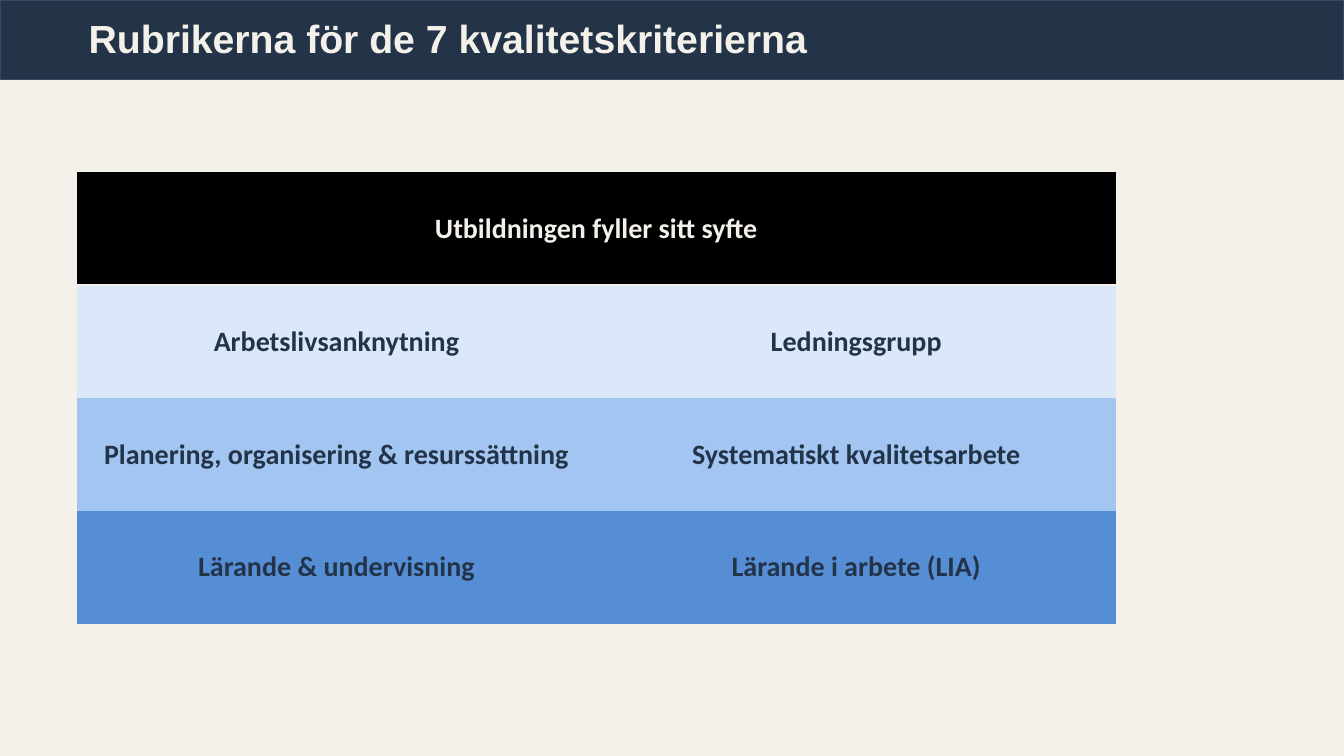
from lxml import etree
from pptx import Presentation
from pptx import util as u
from pptx.dml.color import RGBColor
from pptx.enum import shapes, text
from pptx.oxml.ns import qn

CREAM = RGBColor(0xF4, 0xF1, 0xEB)
NAVY = RGBColor(0x23, 0x33, 0x48)
BAND_EDGE = RGBColor(0x38, 0x49, 0x68)
BLACK = RGBColor(0x00, 0x00, 0x00)
PALE_BLUE = RGBColor(0xDA, 0xE8, 0xFA)
LIGHT_BLUE = RGBColor(0xA3, 0xC5, 0xF2)
MID_BLUE = RGBColor(0x55, 0x8E, 0xD5)
NO_STYLE = "{2D5ABB26-0587-4C30-8999-92F81FD0307C}"

BAND_HEIGHT = u.Inches(0.79)
COLUMN_WIDTH = u.Inches(5.155)
ROW_HEIGHT = u.Inches(1.12)

CRITERIA = [
    (BLACK, CREAM, ["Utbildningen fyller sitt syfte", ""]),
    (PALE_BLUE, NAVY, ["Arbetslivsanknytning", "Ledningsgrupp"]),
    (LIGHT_BLUE, NAVY, ["Planering, organisering & resurssättning",
                        "Systematiskt kvalitetsarbete"]),
    (MID_BLUE, NAVY, ["Lärande & undervisning", "Lärande i arbete (LIA)"]),
]


def add_bold_run(paragraph, words, font, size, color):
    run = paragraph.add_run()
    run.text = words
    run.font.name = font
    run.font.size = u.Pt(size)
    run.font.bold = True
    run.font.color.rgb = color


prs = Presentation()
prs.slide_width = u.Inches(13.33)
prs.slide_height = u.Inches(7.5)
slide = prs.slides.add_slide(prs.slide_layouts[5])
slide.background.fill.solid()
slide.background.fill.fore_color.rgb = CREAM

# Header band, placed behind the title
band = slide.shapes.add_shape(shapes.MSO_SHAPE.RECTANGLE, 0, 0,
                              prs.slide_width, BAND_HEIGHT)
band.shadow.inherit = False
band.fill.solid()
band.fill.fore_color.rgb = NAVY
band.line.color.rgb = BAND_EDGE
band.line.width = u.Pt(1)
title = slide.shapes.title
title._element.addprevious(band._element)

title.left, title.top = 0, u.Inches(0.01)
title.width, title.height = u.Inches(10.03), BAND_HEIGHT
heading = title.text_frame
heading.auto_size = text.MSO_AUTO_SIZE.NONE
heading.vertical_anchor = text.MSO_ANCHOR.MIDDLE
heading.margin_left = u.Inches(0.88)
heading.paragraphs[0].alignment = text.PP_ALIGN.LEFT
heading.paragraphs[0].line_spacing = 0.9
add_bold_run(heading.paragraphs[0], "Rubrikerna för de 7 kvalitetskriterierna",
             "Arial", 28, CREAM)

# Criteria table: one merged heading row above three pairs
frame = slide.shapes.add_table(len(CRITERIA), 2, u.Inches(0.76), u.Inches(1.71),
                               2 * COLUMN_WIDTH, len(CRITERIA) * ROW_HEIGHT)
table = frame.table
table.first_row = table.horz_banding = False
table._tbl.tblPr.find(qn("a:tableStyleId")).text = NO_STYLE
table.cell(0, 0).merge(table.cell(0, 1))

for row, (fill, ink, names) in enumerate(CRITERIA):
    for column, name in enumerate(names):
        cell = table.cell(row, column)
        cell.fill.solid()
        cell.fill.fore_color.rgb = fill
        cell.vertical_anchor = text.MSO_ANCHOR.MIDDLE
        if name:
            paragraph = cell.text_frame.paragraphs[0]
            paragraph.alignment = text.PP_ALIGN.CENTER
            add_bold_run(paragraph, name, "Calibri", 20, ink)

# Rule under the heading row
for cell in table.rows[0].cells:
    rule = etree.Element(qn("a:lnB"), w=str(u.Pt(2)))
    rule_fill = etree.SubElement(rule, qn("a:solidFill"))
    etree.SubElement(rule_fill, qn("a:srgbClr"), val=str(CREAM))
    cell._tc.get_or_add_tcPr().insert(0, rule)

prs.save("out.pptx")
